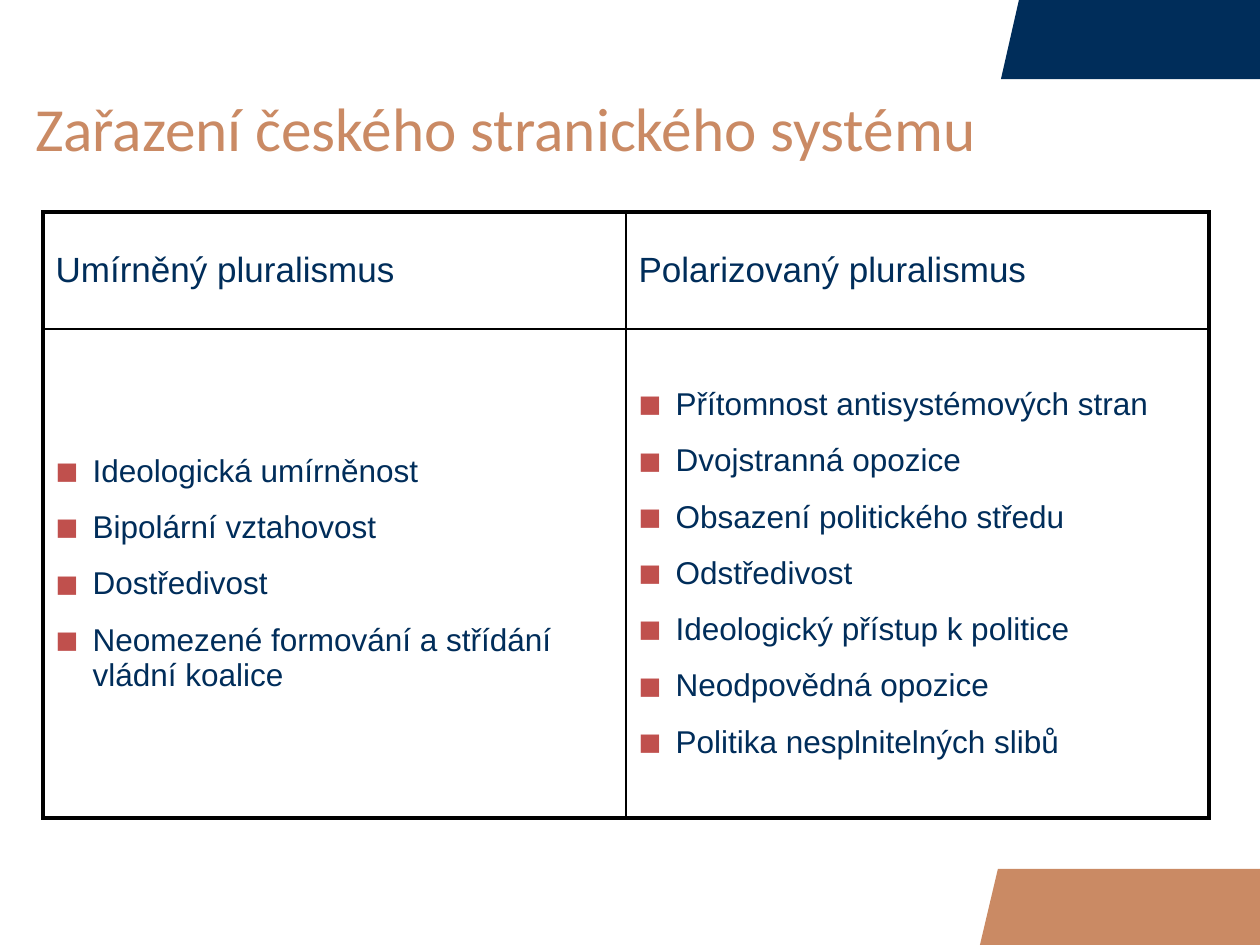
import pptx
import pptx.util
import pptx.dml.color
import pptx.enum.text
import pptx.oxml
import pptx.oxml.ns

PX = 914400 // 126
NAVY, COPPER, RED, BLACK = "002D5A", "CA8A64", "C0504D", "000000"
THICK, THIN = 2.25, 1

TITLE = "Zařazení českého stranického systému"
COLUMNS = [
    ("Umírněný pluralismus", [
        "Ideologická umírněnost",
        "Bipolární vztahovost",
        "Dostředivost",
        "Neomezené formování a střídání vládní koalice",
    ]),
    ("Polarizovaný pluralismus", [
        "Přítomnost antisystémových stran",
        "Dvojstranná opozice",
        "Obsazení politického středu",
        "Odstředivost",
        "Ideologický přístup k politice",
        "Neodpovědná opozice",
        "Politika nesplnitelných slibů",
    ]),
]
CORNERS = [
    (NAVY, [(1001, 79), (1019, 0), (1260, 0), (1260, 79)]),
    (COPPER, [(980, 945), (998, 869), (1260, 869), (1260, 945)]),
]
TABLE_LEFT, TABLE_TOP = 43, 212
COL_WIDTH, ROW_HEIGHTS = 583, (117, 489)


def px(n):
    return pptx.util.Emu(n * PX)


def rgb(color):
    return pptx.dml.color.RGBColor.from_string(color)


def xml(tag, body="", **attrs):
    text = "".join(f' {k}="{v}"' for k, v in attrs.items())
    return pptx.oxml.parse_xml(
        f'<a:{tag} {pptx.oxml.ns.nsdecls("a")}{text}>{body}</a:{tag}>')


def write(p, text, size, color=NAVY, font="Arial", before=0, bullet=False):
    p.space_before = pptx.util.Pt(before)
    r = p.add_run()
    r.text = text
    r.font.size = pptx.util.Pt(size)
    r.font.name = font
    r.font.color.rgb = rgb(color)
    if bullet:
        pPr = p._p.get_or_add_pPr()
        pPr.set("marL", str(px(37)))
        pPr.set("indent", str(-px(37)))
        pPr.append(xml("buClr", f'<a:srgbClr val="{RED}"/>'))
        pPr.append(xml("buSzPct", val=120000))
        pPr.append(xml("buFont", typeface="Arial"))
        pPr.append(xml("buChar", char="■"))


def set_borders(cell, **widths):
    tcPr = cell._tc.get_or_add_tcPr()
    for side in "LRTB":
        tcPr.append(xml(
            f"ln{side}", f'<a:solidFill><a:srgbClr val="{BLACK}"/></a:solidFill>',
            w=int(pptx.util.Pt(widths[side]))))


def add_corner(slide, color, points):
    builder = slide.shapes.build_freeform(*points[0], scale=PX)
    builder.add_line_segments(points[1:], close=True)
    s = builder.convert_to_shape()
    s.shadow.inherit = False
    s.fill.solid()
    s.fill.fore_color.rgb = rgb(color)
    s.line.fill.background()


def add_title(slide):
    s = slide.shapes.title
    s.left, s.top, s.width, s.height = px(0), px(64), px(1260), px(127)
    tf = s.text_frame
    tf.margin_left = tf.margin_right = px(35)
    tf.vertical_anchor = pptx.enum.text.MSO_ANCHOR.MIDDLE
    p = tf.paragraphs[0]
    p.alignment = pptx.enum.text.PP_ALIGN.LEFT
    write(p, TITLE, 35, color=COPPER, font="Calibri")


def add_comparison(slide):
    last = len(COLUMNS) - 1
    table = slide.shapes.add_table(
        2, len(COLUMNS), px(TABLE_LEFT), px(TABLE_TOP),
        px(COL_WIDTH * len(COLUMNS)), px(sum(ROW_HEIGHTS))).table
    table.first_row = table.horz_banding = False
    for row, height in zip(table.rows, ROW_HEIGHTS):
        row.height = px(height)
    for c, (heading, points) in enumerate(COLUMNS):
        table.columns[c].width = px(COL_WIDTH)
        head, body = table.cell(0, c), table.cell(1, c)
        write(head.text_frame.paragraphs[0], heading, 20, before=4)
        tf = body.text_frame
        for i, point in enumerate(points):
            p = tf.add_paragraph() if i else tf.paragraphs[0]
            write(p, point, 18, before=12, bullet=True)
        for r, cell in enumerate((head, body)):
            cell.vertical_anchor = pptx.enum.text.MSO_ANCHOR.MIDDLE
            set_borders(cell,
                        L=THIN if c else THICK,
                        R=THICK if c == last else THIN,
                        T=THIN if r else THICK,
                        B=THICK if r else THIN)
            cell.fill.background()


def main():
    prs = pptx.Presentation()
    prs.slide_width, prs.slide_height = px(1260), px(945)
    slide = prs.slides.add_slide(prs.slide_layouts[5])
    for color, points in CORNERS:
        add_corner(slide, color, points)
    add_title(slide)
    add_comparison(slide)
    prs.save("out.pptx")


if __name__ == "__main__":
    main()
